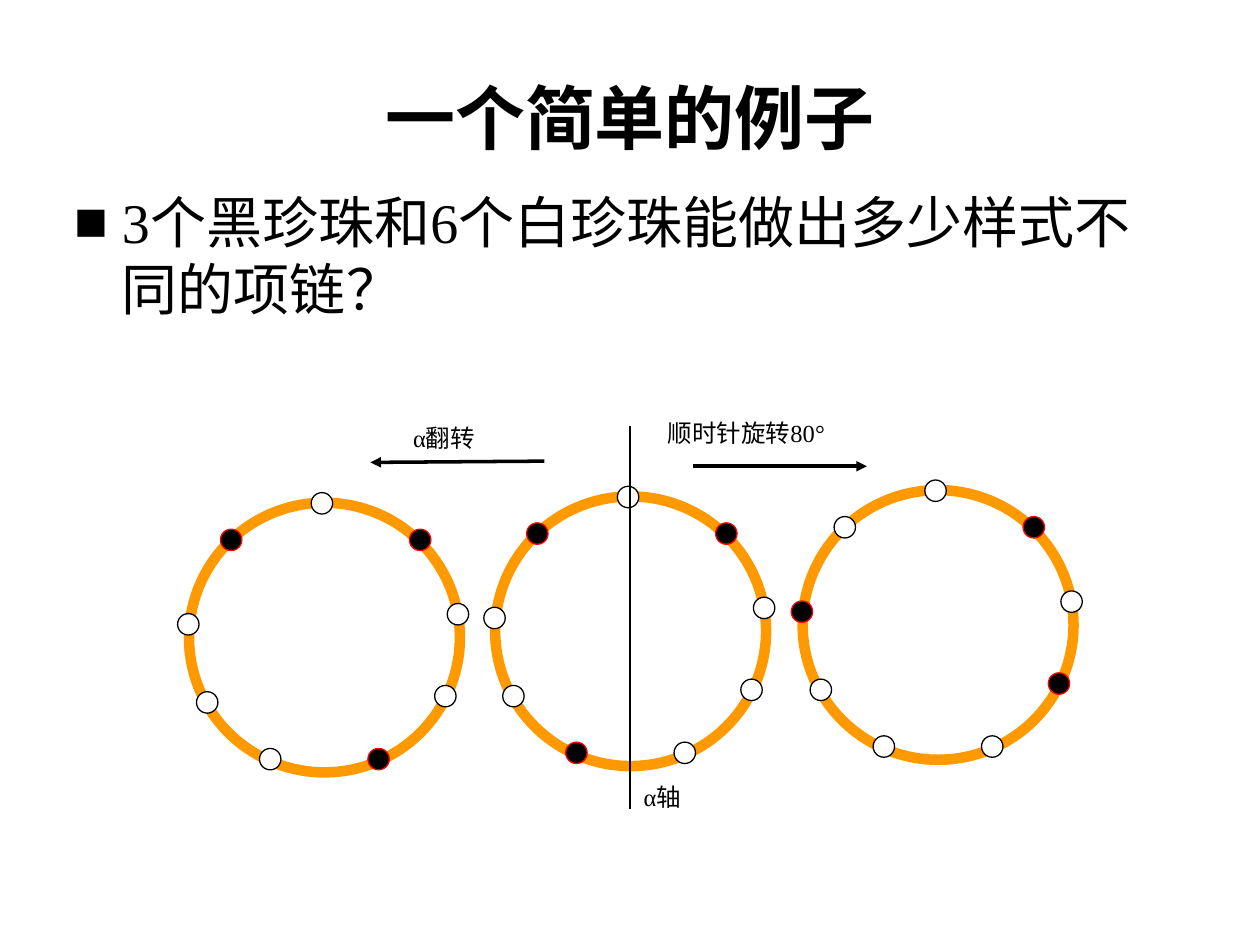
from typing import NamedTuple

from lxml.etree import SubElement
from pptx import Presentation
from pptx.dml.color import RGBColor
from pptx.enum.shapes import MSO_CONNECTOR as CONN, MSO_SHAPE as SHAPE
from pptx.enum.text import MSO_ANCHOR as ANCHOR, PP_ALIGN as ALIGN
from pptx.oxml.ns import qn
from pptx.util import Inches, Pt

BLACK = RGBColor(0, 0, 0)
WHITE = RGBColor(0xFF, 0xFF, 0xFF)
ORANGE = RGBColor(0xFF, 0x99, 0x00)
RED = RGBColor(0xFF, 0, 0)
SERIF = "Times New Roman"

RING_W, RING_H, BEAD = 2.15, 2.14, 0.17
# Bead corners relative to the ring's corner, clockwise from the top
BEAD_OFFSETS = [(0.97, -0.08), (1.75, 0.21), (2.05, 0.8), (1.95, 1.45), (1.42, 1.95),
                (0.56, 1.95), (0.06, 1.5), (-0.09, 0.88), (0.25, 0.21)]


class Necklace(NamedTuple):
    left: float
    top: float
    black: set[int]


class Line(NamedTuple):
    x1: float
    y1: float
    x2: float
    y2: float
    width: float
    arrow: bool


class Label(NamedTuple):
    text: str
    left: float
    top: float
    width: float
    height: float
    size: float = 14
    font: str = SERIF
    bold: bool = False
    align: ALIGN = ALIGN.JUSTIFY
    anchor: ANCHOR = ANCHOR.TOP
    bullet: str = ""


NECKLACES = [
    Necklace(3.93, 3.94, {1, 5, 8}),
    Necklace(1.5, 3.99, {1, 4, 8}),
    Necklace(6.37, 3.89, {1, 3, 7}),
]
LINES = [
    Line(5, 3.38, 5, 6.42, 0.75, False),
    Line(5.5, 3.7, 6.88, 3.7, 2, True),
    Line(4.32, 3.66, 2.94, 3.67, 2, True),
]
LABELS = [
    Label("一个简单的例子", 0.5, 0.3, 9, 1.25, 40, "Arial Narrow", True,
          ALIGN.CENTER, ANCHOR.MIDDLE),
    Label("3个黑珍珠和6个白珍珠能做出多少样式不同的项链？", 0.49, 1.44, 9, 4.95, 32,
          align=ALIGN.LEFT, bullet="■"),
    Label("α轴", 5.01, 6.16, 0.76, 0.45),
    Label("α翻转", 3.18, 3.31, 1.21, 0.42),
    Label("顺时针旋转80°", 5.2, 3.27, 1.91, 0.4),
]


def add_label(s, label: Label) -> None:
    box = s.shapes.add_textbox(Inches(label.left), Inches(label.top),
                               Inches(label.width), Inches(label.height))
    tf = box.text_frame
    tf.word_wrap = True
    tf.vertical_anchor = label.anchor
    p = tf.paragraphs[0]
    p.alignment = label.align
    if label.bullet:
        ppr = p._p.get_or_add_pPr()
        ppr.set("marL", str(Inches(0.38)))
        ppr.set("indent", str(-Inches(0.38)))
        SubElement(ppr, qn("a:buFont"), typeface=SERIF)
        SubElement(ppr, qn("a:buChar"), char=label.bullet)
    r = p.add_run()
    r.text = label.text
    r.font.size = Pt(label.size)
    r.font.name = label.font
    r.font.bold = label.bold
    r.font.color.rgb = BLACK


def add_ellipse(s, left: float, top: float, width: float, height: float,
                fill: RGBColor, line: RGBColor, weight: float) -> None:
    sp = s.shapes.add_shape(SHAPE.OVAL, Inches(left), Inches(top),
                            Inches(width), Inches(height))
    sp.shadow.inherit = False
    sp.fill.solid()
    sp.fill.fore_color.rgb = fill
    sp.line.color.rgb = line
    sp.line.width = Pt(weight)


def add_necklace(s, necklace: Necklace) -> None:
    left, top, black = necklace
    add_ellipse(s, left, top, RING_W, RING_H, WHITE, ORANGE, 6)
    for i, (dx, dy) in enumerate(BEAD_OFFSETS):
        fill, line = (BLACK, RED) if i in black else (WHITE, BLACK)
        add_ellipse(s, left + dx, top + dy, BEAD, BEAD, fill, line, 0.75)


def add_line(s, line: Line) -> None:
    cxn = s.shapes.add_connector(CONN.STRAIGHT, Inches(line.x1), Inches(line.y1),
                                 Inches(line.x2), Inches(line.y2))
    cxn.line.color.rgb = BLACK
    cxn.line.width = Pt(line.width)
    if line.arrow:
        SubElement(cxn.line._get_or_add_ln(), qn("a:tailEnd"), type="triangle")
    SubElement(cxn._element.spPr, qn("a:effectLst"))


def main() -> None:
    prs = Presentation()
    prs.slide_width, prs.slide_height = Inches(10), Inches(7.5)
    s = prs.slides.add_slide(prs.slide_layouts[6])
    for necklace in NECKLACES:
        add_necklace(s, necklace)
    for line in LINES:
        add_line(s, line)
    for label in LABELS:
        add_label(s, label)
    prs.save("out.pptx")


if __name__ == "__main__":
    main()
